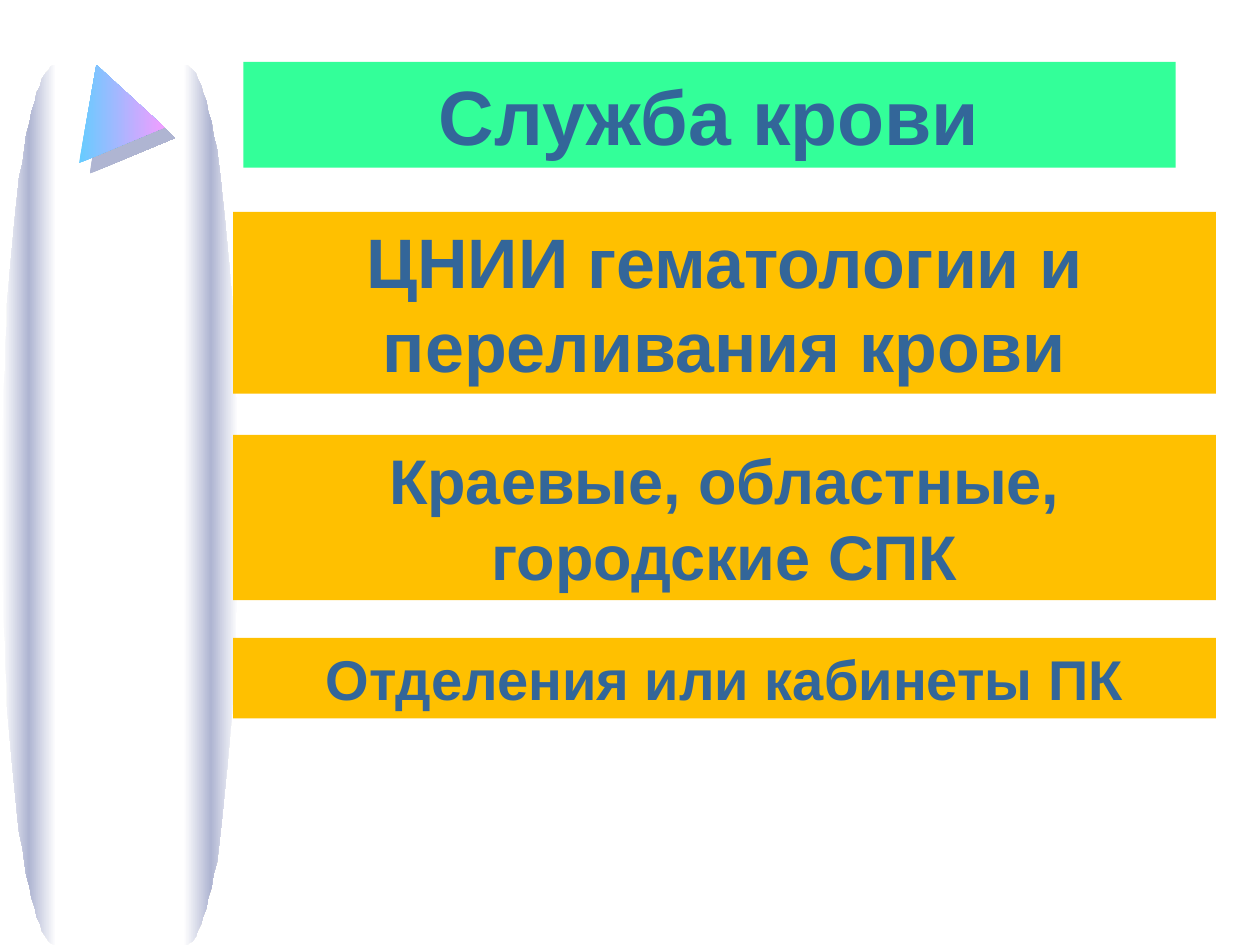
from math import cos, pi, sin

from lxml import etree
from pptx import Presentation
from pptx.dml.color import RGBColor
from pptx.enum.shapes import MSO_SHAPE
from pptx.enum.text import MSO_ANCHOR, MSO_AUTO_SIZE, PP_ALIGN
from pptx.oxml.ns import qn
from pptx.util import Pt

RECTANGLE = MSO_SHAPE.RECTANGLE
TRIANGLE = MSO_SHAPE.ISOSCELES_TRIANGLE
CENTER = PP_ALIGN.CENTER
MIDDLE = MSO_ANCHOR.MIDDLE
NO_AUTOFIT = MSO_AUTO_SIZE.NONE

TITLE_ONLY = 5
GREEN, AMBER, BLUE = "33FF99", "FFC000", "336699"
WHITE, LILAC = "FFFFFF", "AFB5D2"
SKY, PINK = "66CCFF", "FF99FF"
ARC_STEPS = 60


def color(value):
    return RGBColor.from_string(value)


def set_gradient(shape, colors):
    """Fill with evenly spaced colours from left to right."""
    shape.fill.gradient()
    shape.fill.gradient_angle = 0
    gradient = shape._element.spPr.find(qn("a:gradFill"))
    gradient.set("rotWithShape", "0")
    stops = gradient.find(qn("a:gsLst"))
    for stop in list(stops):
        stops.remove(stop)
    for index, value in enumerate(colors):
        position = round(100000 * index / (len(colors) - 1))
        stop = etree.SubElement(stops, qn("a:gs"), pos=str(position))
        etree.SubElement(stop, qn("a:srgbClr"), val=value)


def add_shadow(shape, value, distance, angle):
    effects = shape._element.spPr.find(qn("a:effectLst"))
    shadow = etree.SubElement(
        effects, qn("a:outerShdw"), dist=str(Pt(distance)),
        dir=str(angle * 60000), algn="ctr", rotWithShape="0")
    etree.SubElement(shadow, qn("a:srgbClr"), val=value)


def set_text(shape, text, size):
    frame = shape.text_frame
    frame.text = text
    frame_format = {"word_wrap": True, "auto_size": NO_AUTOFIT,
                    "vertical_anchor": MIDDLE}
    for name, value in frame_format.items():
        setattr(frame, name, value)
    paragraph = frame.paragraphs[0]
    paragraph.alignment = CENTER
    font = paragraph.runs[0].font
    font_format = {"name": "Arial", "size": Pt(size), "bold": True}
    for name, value in font_format.items():
        setattr(font, name, value)
    font.color.rgb = color(BLUE)


def add_half_ellipse(slide, left, top, width, height, side):
    """Side -1 bulges to the left, side 1 to the right."""
    center_x = left + width if side < 0 else left
    center_y = top + height / 2
    angles = [pi * step / ARC_STEPS for step in range(ARC_STEPS + 1)]
    points = [(center_x + side * width * sin(angle),
               center_y - height / 2 * cos(angle)) for angle in angles]
    builder = slide.shapes.build_freeform(*points[0], scale=Pt(1))
    builder.add_line_segments(points[1:], close=True)
    shape = builder.convert_to_shape()
    set_gradient(shape, [WHITE, LILAC, WHITE])
    shape.line.fill.background()
    shape.shadow.inherit = False


def add_decoration(slide, left, top, width, height):
    # Column sides
    side_width = 31.5
    add_half_ellipse(slide, left, top, side_width, height, -1)
    add_half_ellipse(slide, left + width - side_width, top,
                     side_width, height, 1)
    # Tilted triangle with shadow
    triangle = slide.shapes.add_shape(
        TRIANGLE, Pt(left + 42.5), Pt(top + 10), Pt(57), Pt(44.5))
    triangle.rotation = 100
    set_gradient(triangle, [SKY, PINK])
    triangle.line.fill.background()
    triangle.shadow.inherit = False
    add_shadow(triangle, LILAC, 8.5, 45)


def add_title(slide, text, left, top, width, height):
    title = slide.shapes.title
    box = {"left": left, "top": top, "width": width, "height": height}
    for name, value in box.items():
        setattr(title, name, Pt(value))
    title.fill.solid()
    title.fill.fore_color.rgb = color(GREEN)
    set_text(title, text, 44)


def add_level(slide, text, size, left, top, width, height):
    level = slide.shapes.add_shape(
        RECTANGLE, Pt(left), Pt(top), Pt(width), Pt(height))
    level.fill.solid()
    level.fill.fore_color.rgb = color(AMBER)
    level.line.fill.background()
    level.shadow.inherit = False
    set_text(level, text, size)


def main():
    presentation = Presentation()
    presentation.slide_width, presentation.slide_height = Pt(720), Pt(540)
    slide = presentation.slides.add_slide(
        presentation.slide_layouts[TITLE_ONLY])

    add_decoration(slide, 1, 36.7, 135.5, 504)
    add_title(slide, "Служба крови", 139, 35.3, 532.8, 60.5)

    # Levels of the service: text, size, top, height
    levels = [
        ("ЦНИИ гематологии и переливания крови", 40, 121, 104),
        ("Краевые, областные, городские СПК", 36, 248.5, 94.5),
        ("Отделения или кабинеты ПК", 32, 364.5, 46),
    ]
    for text, size, top, height in levels:
        add_level(slide, text, size, 133.2, top, 561.6, height)

    presentation.save("out.pptx")


if __name__ == "__main__":
    main()
